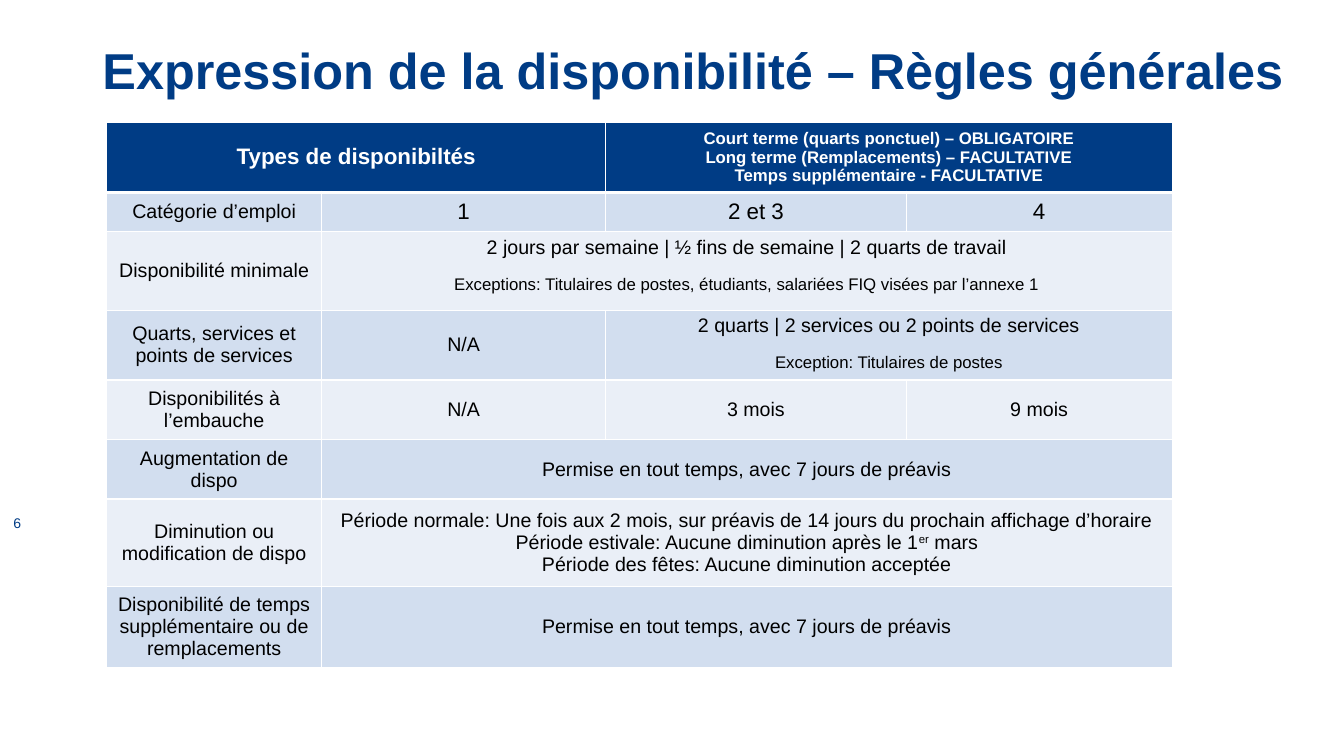
from lxml.etree import SubElement
from pptx import Presentation
from pptx.dml.color import RGBColor
from pptx.enum.text import MSO_ANCHOR as ANCHOR, PP_ALIGN as ALIGN
from pptx.oxml.ns import qn
from pptx.util import Pt

FONT = "Arial"
NAVY, WHITE, BLACK = "003C85", "FFFFFF", "000000"
BANDS = ("EAEFF7", "D2DEEF")
COLUMNS = (153.4, 203, 214.6, 190)
ANYTIME = "Permise en tout temps, avec 7 jours de préavis"

# Each row: height, then cells of (columns spanned, text size, lines).
# A cell's exception line is set smaller, after a gap; ^ encloses superscript.
ROWS = [
    (48, [(2, 16, ["Types de disponibiltés"]),
          (2, 12, ["Court terme (quarts ponctuel) – OBLIGATOIRE",
                   "Long terme (Remplacements) – FACULTATIVE",
                   "Temps supplémentaire - FACULTATIVE"])]),
    (28, [(1, 14, ["Catégorie d’emploi"]), (1, 16, ["1"]),
          (1, 16, ["2 et 3"]), (1, 16, ["4"])]),
    (56, [(1, 14, ["Disponibilité minimale"]),
          (3, 14, ["2 jours par semaine | ½ fins de semaine | 2 quarts de travail",
                   "Exceptions: Titulaires de postes, étudiants, salariées FIQ "
                   "visées par l’annexe 1"])]),
    (48.5, [(1, 14, ["Quarts, services et points de services"]), (1, 14, ["N/A"]),
            (2, 14, ["2 quarts | 2 services ou 2 points de services",
                     "Exception: Titulaires de postes"])]),
    (42.5, [(1, 14, ["Disponibilités à l’embauche"]), (1, 14, ["N/A"]),
            (1, 14, ["3 mois"]), (1, 14, ["9 mois"])]),
    (42.5, [(1, 14, ["Augmentation de dispo"]), (3, 14, [ANYTIME])]),
    (62.5, [(1, 14, ["Diminution ou modification de dispo"]),
            (3, 14, ["Période normale: Une fois aux 2 mois, sur préavis de 14 jours "
                     "du prochain affichage d’horaire",
                     "Période estivale: Aucune diminution après le 1^er^ mars",
                     "Période des fêtes: Aucune diminution acceptée"])]),
    (57, [(1, 14, ["Disponibilité de temps supplémentaire ou de remplacements"]),
          (3, 14, [ANYTIME])]),
]


def rgb(value):
    return RGBColor.from_string(value)


def format_paragraph(p, size, color, bold=False, align=ALIGN.CENTER):
    p.alignment = align
    p.font.name, p.font.size, p.font.bold = FONT, Pt(size), bold
    p.font.color.rgb = rgb(color)


def add_title(slide, left, top, width, height):
    sp = slide.shapes.title
    sp.left, sp.top, sp.width, sp.height = Pt(left), Pt(top), Pt(width), Pt(height)
    tf = sp.text_frame
    tf.text = "Expression de la disponibilité – Règles générales"
    tf.vertical_anchor = ANCHOR.TOP
    p = tf.paragraphs[0]
    p.line_spacing = 0.9
    format_paragraph(p, 36, NAVY, True, ALIGN.LEFT)


def add_page_number(slide, left, top, width, height):
    sp = slide.shapes.add_textbox(Pt(left), Pt(top), Pt(width), Pt(height))
    tf = sp.text_frame
    tf.word_wrap = True
    tf.vertical_anchor = ANCHOR.MIDDLE
    tf.text = "6"
    format_paragraph(tf.paragraphs[0], 10, NAVY)


def set_borders(cell, top, bottom):
    """Draw white borders; top and bottom are widths in points."""
    tcPr = cell._tc.get_or_add_tcPr()
    for side, width in (("L", 1), ("R", 1), ("T", top), ("B", bottom)):
        ln = SubElement(tcPr, qn(f"a:ln{side}"), w=str(Pt(width)))
        fill = SubElement(ln, qn("a:solidFill"))
        SubElement(fill, qn("a:srgbClr"), val=WHITE)


def fill_cell(cell, size, lines, header):
    tf = cell.text_frame
    cell.vertical_anchor = ANCHOR.MIDDLE
    for i, line in enumerate(lines):
        p = tf.paragraphs[0] if i == 0 else tf.add_paragraph()
        exception = line.startswith("Exception")
        if exception:
            cell.vertical_anchor = ANCHOR.TOP
            p.space_before = Pt(11.5)
        format_paragraph(p, 12 if exception else size,
                         WHITE if header else BLACK, header)
        for part, text in enumerate(line.split("^")):
            r = p.add_run()
            r.text = text
            if part % 2:
                r._r.get_or_add_rPr().set("baseline", "30000")


def add_rules_table(slide, left, top):
    width, height = sum(COLUMNS), sum(row[0] for row in ROWS)
    table = slide.shapes.add_table(len(ROWS), len(COLUMNS), Pt(left), Pt(top),
                                   Pt(width), Pt(height)).table
    for column, column_width in zip(table.columns, COLUMNS):
        column.width = Pt(column_width)
    for i, (row_height, cells) in enumerate(ROWS):
        table.rows[i].height = Pt(row_height)
        for cell in table.rows[i].cells:
            set_borders(cell, 3 if i == 1 else 1, 3 if i == 0 else 1)
            cell.fill.solid()
            cell.fill.fore_color.rgb = rgb(BANDS[i % 2] if i else NAVY)
        col = 0
        for span, size, lines in cells:
            cell = table.cell(i, col)
            if span > 1:
                cell.merge(table.cell(i, col + span - 1))
            fill_cell(cell, size, lines, i == 0)
            col += span


def main():
    prs = Presentation()
    prs.slide_width, prs.slide_height = Pt(960), Pt(540)
    slide = prs.slides.add_slide(prs.slide_layouts[5])
    add_title(slide, 66, 29, 876, 104)
    add_page_number(slide, 0, 359, 24.5, 29)
    add_rules_table(slide, 76.3, 87.1)
    prs.save("out.pptx")


if __name__ == "__main__":
    main()
